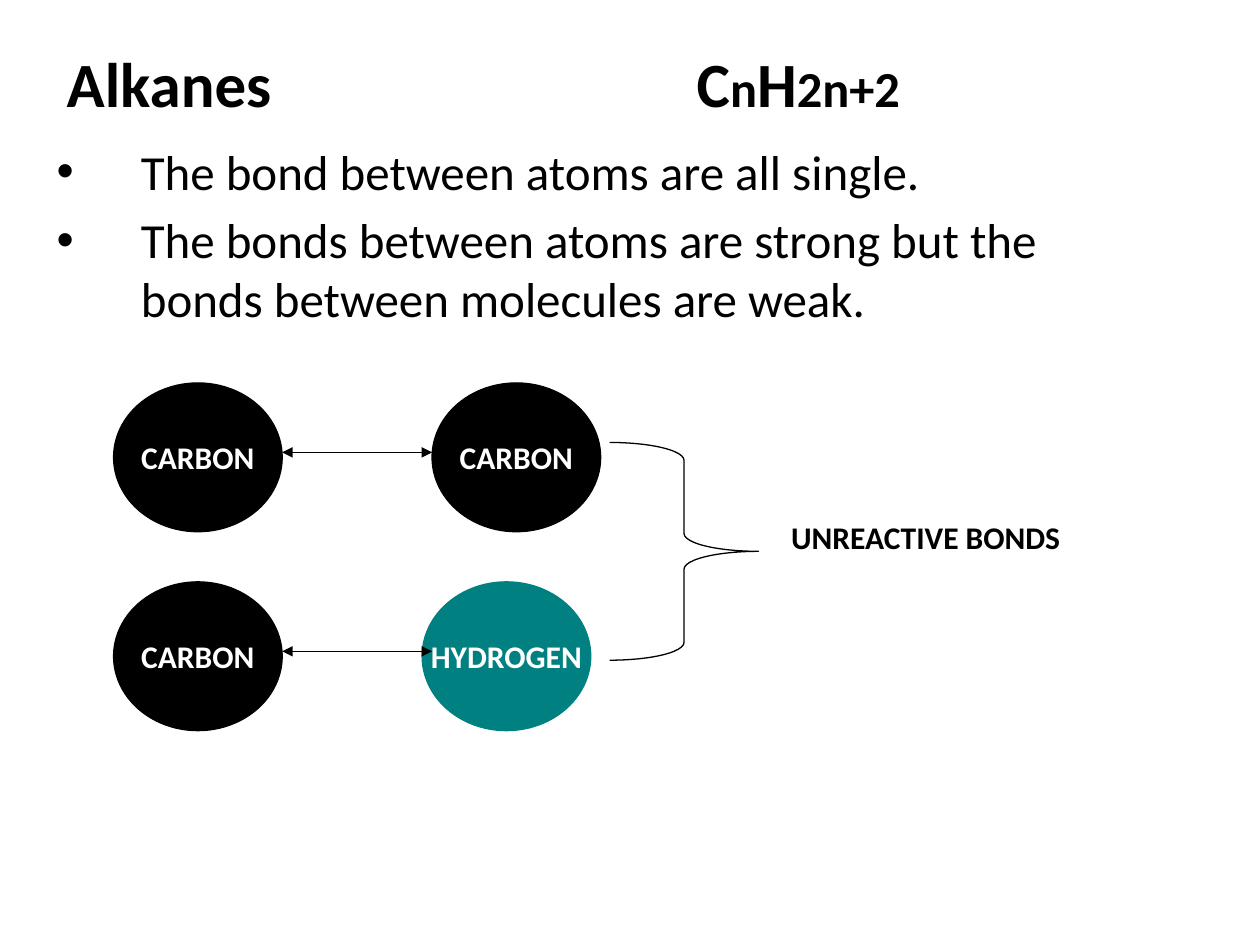
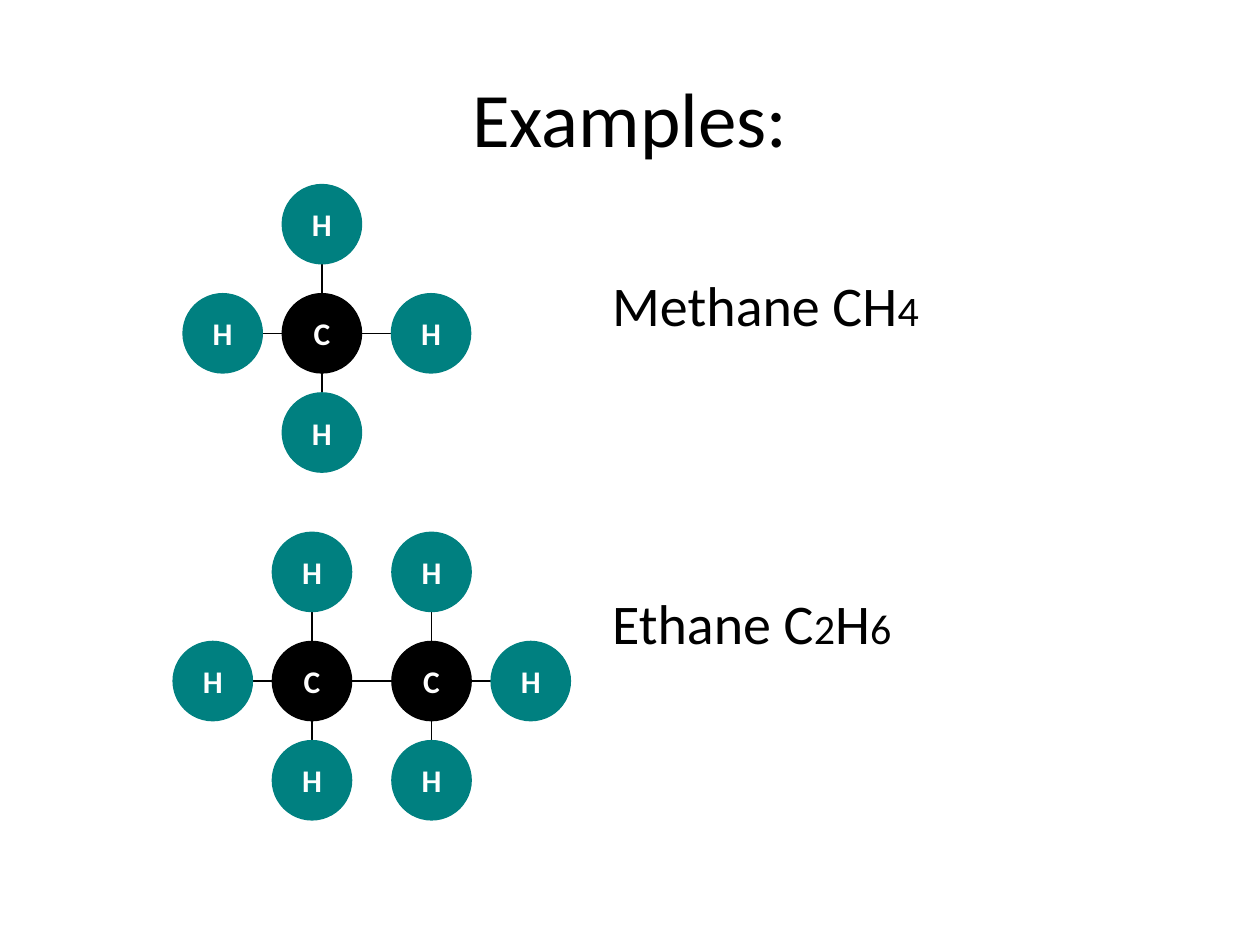
from dataclasses import dataclass

from lxml import etree
from pptx import Presentation
from pptx.dml.color import RGBColor
from pptx.enum.shapes import MSO_CONNECTOR, MSO_SHAPE
from pptx.enum.text import MSO_ANCHOR, MSO_AUTO_SIZE, PP_ALIGN
from pptx.oxml.ns import qn
from pptx.util import Cm, Pt

ELLIPSE = MSO_SHAPE.OVAL
BRACE = MSO_SHAPE.RIGHT_BRACE
STRAIGHT = MSO_CONNECTOR.STRAIGHT
TOP, MIDDLE = MSO_ANCHOR.TOP, MSO_ANCHOR.MIDDLE
LEFT, CENTER = PP_ALIGN.LEFT, PP_ALIGN.CENTER
NO_FIT = MSO_AUTO_SIZE.NONE
TITLE_ONLY = 5


@dataclass(frozen=True)
class Theme:
    font: str = "Calibri"
    black: RGBColor = RGBColor(0, 0, 0)
    white: RGBColor = RGBColor(255, 255, 255)
    teal: RGBColor = RGBColor(0, 128, 128)
    title: float = 44
    formula: float = 36
    formula_small: float = 28.8
    name: float = 32
    name_small: float = 24
    body: float = 28
    label: float = 18
    line: float = 0.75


class Deck:
    """Holds the style and the slide being drawn."""

    def __init__(self, theme):
        self.theme = theme
        self.deck = Presentation()
        self.deck.slide_width, self.deck.slide_height = Cm(25.4), Cm(19.05)
        self.page = None
        self.shapes = None

    def new_page(self):
        self.page = self.deck.slides.add_slide(self.deck.slide_layouts[TITLE_ONLY])
        self.shapes = self.page.shapes

    def start_group(self):
        self.shapes = self.page.shapes.add_group_shape().shapes

    def end_group(self):
        self.shapes = self.page.shapes

    def add_spans(self, para, spans, color=None, bold=False, align=LEFT):
        """Add (text, size) spans to a paragraph."""
        para.alignment = align
        for text, size in spans:
            span = para.add_run()
            span.text = text
            span.font.name = self.theme.font
            span.font.size = Pt(size)
            span.font.bold = bold
            span.font.color.rgb = color or self.theme.black

    def title(self, left, top, width, height, spans, align=CENTER, bold=False,
              anchor=MIDDLE):
        box = self.page.shapes.title
        box.left, box.top = Cm(left), Cm(top)
        box.width, box.height = Cm(width), Cm(height)
        frame = box.text_frame
        frame.auto_size, frame.vertical_anchor = NO_FIT, anchor
        self.add_spans(frame.paragraphs[0], spans, bold=bold, align=align)
        return frame

    def text(self, left, top, width, height, spans, bold=False):
        frame = self.text_frame(left, top, width, height)
        self.add_spans(frame.paragraphs[0], spans, bold=bold)

    def text_frame(self, left, top, width, height):
        box = self.shapes.add_textbox(Cm(left), Cm(top), Cm(width), Cm(height))
        box.text_frame.word_wrap = True
        return box.text_frame

    def bullets(self, left, top, width, height, items, indent):
        frame = self.text_frame(left, top, width, height)
        for index, item in enumerate(items):
            para = frame.add_paragraph() if index else frame.paragraphs[0]
            self.add_spans(para, [(item, self.theme.body)])
            para.space_before = Pt(0.2 * self.theme.body)
            props = para._p.get_or_add_pPr()
            props.set("marL", str(Cm(indent)))
            props.set("indent", str(-Cm(indent)))
            etree.SubElement(props, qn("a:buFont"), typeface="Arial")
            etree.SubElement(props, qn("a:buChar"), char="•")

    def atom(self, left, top, width, height, label, color):
        box = self.shapes.add_shape(ELLIPSE, Cm(left), Cm(top), Cm(width), Cm(height))
        box.shadow.inherit = False
        box.fill.solid()
        box.fill.fore_color.rgb = color
        box.line.color.rgb = color
        box.line.width = Pt(self.theme.line)
        frame = box.text_frame
        frame.word_wrap, frame.vertical_anchor = False, MIDDLE
        self.add_spans(frame.paragraphs[0], [(label, self.theme.label)],
                       self.theme.white, True, CENTER)

    def brace(self, left, top, width, height, curve):
        box = self.shapes.add_shape(BRACE, Cm(left), Cm(top), Cm(width), Cm(height))
        box.adjustments[0], box.adjustments[1] = curve, 0.5
        box.shadow.inherit = False
        box.fill.background()
        box.line.color.rgb = self.theme.black
        box.line.width = Pt(self.theme.line)

    def bond(self, x1, y1, x2, y2, arrows=False):
        line = self.shapes.add_connector(STRAIGHT, Cm(x1), Cm(y1), Cm(x2), Cm(y2))
        line.line.color.rgb = self.theme.black
        line.line.width = Pt(self.theme.line)
        if arrows:
            outline = line.line._get_or_add_ln()
            for end in ("a:headEnd", "a:tailEnd"):
                etree.SubElement(outline, qn(end), type="triangle")
        etree.SubElement(line._element.spPr, qn("a:effectLst"))

    def molecule(self, carbons, hydrogens):
        """Draw a cross of bonds through each carbon, then all atoms, by centre."""
        size = 1.6
        self.start_group()
        for x, y in carbons:
            self.bond(x, y + 2.8, x, y - 2.8)
            self.bond(x - 2.2, y, x + 2.8, y)
        for label, color, centres in (("C", self.theme.black, carbons),
                                      ("H", self.theme.teal, hydrogens)):
            for x, y in centres:
                self.atom(x - size / 2, y - size / 2, size, size, label, color)
        self.end_group()


def alkanes_page(deck):
    theme = deck.theme
    deck.new_page()

    # Title, with the general formula at a tab stop
    big, small = theme.formula, theme.formula_small
    frame = deck.title(1.09, 0.71, 22.6, 3.18,
                       [("Alkanes \tC", big), ("n", small), ("H", big), ("2n+2", small)],
                       align=LEFT, bold=True, anchor=TOP)
    frame.margin_top = Cm(0.19)
    props = frame.paragraphs[0]._p.get_or_add_pPr()
    stops = etree.SubElement(props, qn("a:tabLst"))
    etree.SubElement(stops, qn("a:tab"), pos=str(Cm(12.7)), algn="l")

    deck.bullets(0.89, 2.72, 22.86, 12.57, [
        "The bond between atoms are all single.",
        "The bonds between atoms are strong but the bonds between molecules are weak.",
    ], indent=1.7)

    # Pairs of bonded atoms
    width, height, left, right = 3.4, 3, 2.29, 8.71
    pairs = ((7.72, right, "CARBON", theme.black),
             (11.73, right - 0.2, "HYDROGEN", theme.teal))
    for top, partner_left, partner, color in pairs:
        deck.atom(left, top, width, height, "CARBON", theme.black)
        deck.atom(partner_left, top, width, height, partner, color)
        deck.bond(left + width, top + 1.4, right, top + 1.4, arrows=True)

    # Shared remark
    deck.brace(12.29, 8.92, 3, 4.39, curve=0.12)
    deck.text(15.7, 10.31, 7.11, 1.02, [("UNREACTIVE BONDS", theme.label)], bold=True)


def examples_page(deck):
    theme = deck.theme
    deck.new_page()
    deck.title(1.27, 0.76, 22.86, 3.18, [("Examples:", theme.title)])
    near, far = 2, 2.2

    # Methane
    x, y = 6.49, 6.72
    deck.molecule([(x, y)],
                  [(x, y + near), (x - near, y), (x + far, y), (x, y - far)])

    # Ethane
    first, second, y = 6.29, 8.7, 13.73
    ends = [(first - near, y), (second + near, y)]
    sides = [(x, y + step) for x in (first, second) for step in (near, -far)]
    deck.molecule([(first, y), (second, y)], ends + sides)

    # Names and formulas
    big, small = theme.name, theme.name_small
    deck.text(12.09, 5.33, 8, 1.6, [("Methane CH", big), ("4", small)])
    deck.text(12.09, 11.73, 9.4, 1.6,
              [("Ethane C", big), ("2", small), ("H", big), ("6", small)])


def main():
    deck = Deck(Theme())
    alkanes_page(deck)
    examples_page(deck)
    deck.deck.save("out.pptx")


if __name__ == "__main__":
    main()
